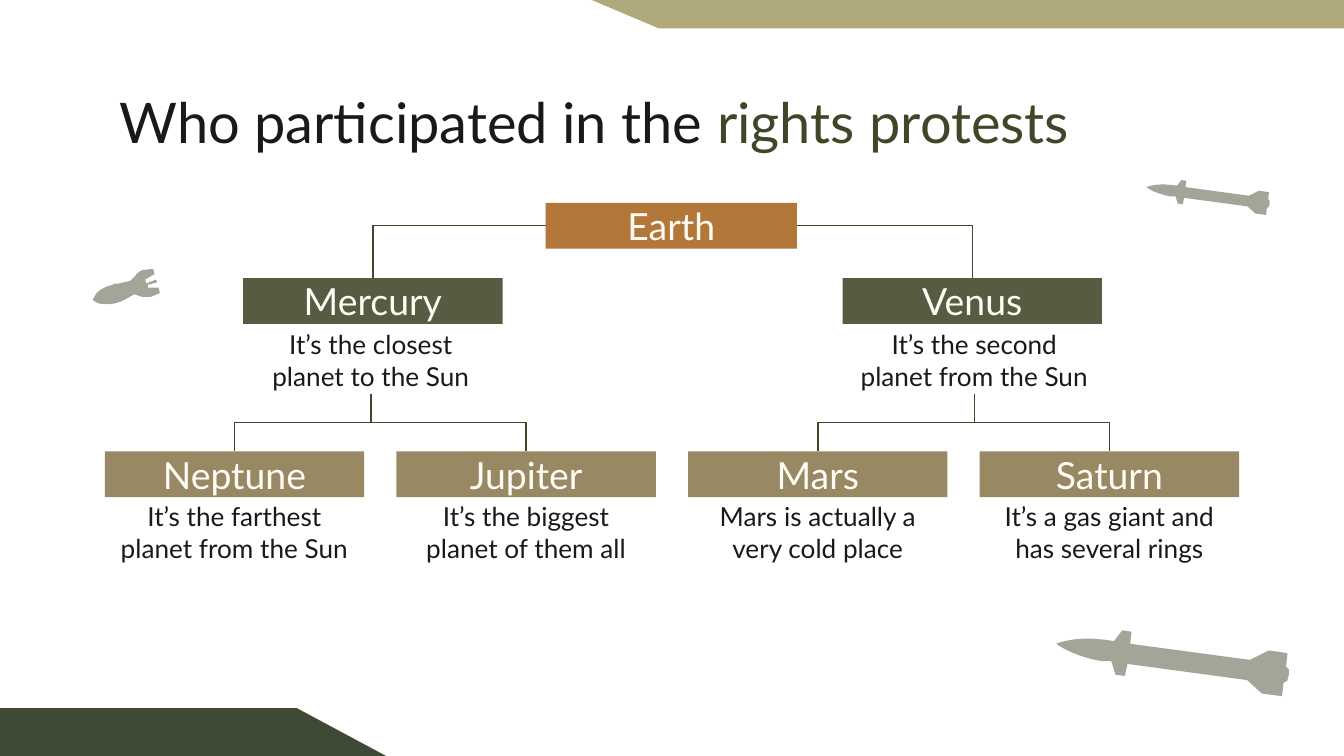
from lxml import etree
from pptx import Presentation
from pptx import util as u
from pptx.dml.color import RGBColor
from pptx.enum import shapes, text
from pptx.oxml.ns import qn

INK = dict(dark="191919", pale="FFFCF3", line="3E4728", root="B27739",
           mid="565C41", leaf="988964", sand="AFA97C", moss="3E4A35")
FONT = "Lato"
TITLE = [("Who participated in the ", "dark"), ("rights protests", "line")]
ROOT = ("Earth", 4.06, 1.87)
MIDS = [("Mercury", "It’s the closest planet to the Sun", 1.81, 1.78),
        ("Venus", "It’s the second planet from the Sun", 6.27, 6.27)]
LEAVES = [("Neptune", "It’s the farthest planet from the Sun"),
          ("Jupiter", "It’s the biggest planet of them all"),
          ("Mars", "Mars is actually a very cold place"),
          ("Saturn", "It’s a gas giant and has several rings")]
ROOT_Y, MID_Y, LEAF_Y = 1.51, 2.07, 3.36
CARD_W, CARD_H, NOTE_W, NOTE_H = 1.93, 0.34, 1.96, 0.5
LEFT, STEP = 0.78, 2.17

ROCKET = [(0.49, 0), (0.43, 0.08), (0.36, 0.07), (0.13, 0.04, 0, 0.1, 0, 0.1),
          (0, 0.1, 0.11, 0.19, 0.34, 0.23), (0.41, 0.23), (0.44, 0.33),
          (0.51, 0.34), (0.53, 0.25), (1.42, 0.37), (1.53, 0.47), (1.68, 0.49),
          (1.69, 0.39), (1.72, 0.38, 1.72, 0.37, 1.72, 0.37), (1.73, 0.33),
          (1.73, 0.29), (1.72, 0.28, 1.72, 0.28, 1.71, 0.27), (1.72, 0.17),
          (1.58, 0.15), (1.44, 0.22), (0.55, 0.1), (0.56, 0.01)]
BOMB = [(0.5, 0.18), (0.49, 0.14), (0.41, 0.14), (0.41, 0.12), (0.48, 0.1),
        (0.47, 0.08), (0.4, 0.11), (0.39, 0.08), (0.46, 0.04), (0.45, 0),
        (0.37, 0.01), (0.35, 0.02, 0.33, 0.03, 0.32, 0.05), (0.28, 0.09),
        (0.19, 0.11), (0.17, 0.11), (0.16, 0.11, 0.15, 0.11, 0.15, 0.12),
        (0.09, 0.13, 0.05, 0.16, 0.03, 0.18), (0.01, 0.21, 0, 0.23, 0, 0.23),
        (0, 0.23, 0.02, 0.25, 0.05, 0.26), (0.09, 0.26, 0.13, 0.27, 0.19, 0.25),
        (0.22, 0.24), (0.31, 0.19), (0.37, 0.21),
        (0.39, 0.21, 0.41, 0.21, 0.43, 0.21)]
TOP = [(0.52, 0.22), (0, 0), (5.62, 0), (5.62, 0.22)]
FOOT = [(0, 0.37), (0, 0), (2.23, 0), (2.92, 0.37)]
ART = [(ROCKET, 8.53, 1.34, 0.53, "line", 48), (BOMB, 0.69, 2, 1, "line", 48),
       (ROCKET, 7.86, 4.69, 1, "line", 48), (TOP, 4.38, -0.01, 1, "sand", 100),
       (FOOT, -0.02, 5.27, 1, "moss", 100)]

deck = Presentation()
deck.slide_width = u.Inches(10)
deck.slide_height = deck.slide_width * 9 // 16
slide = deck.slides.add_slide(deck.slide_layouts[6])


def color(name):
    return RGBColor.from_string(INK[name])


def paint(shape, name):
    shape.shadow.inherit = False
    shape.fill.solid()
    shape.fill.fore_color.rgb = color(name)
    shape.line.fill.background()


def write(shape, runs, size, pad=0.1, align=text.PP_ALIGN.CENTER):
    frame = shape.text_frame
    frame.word_wrap = True
    frame.vertical_anchor = text.MSO_ANCHOR.MIDDLE
    frame.margin_left = frame.margin_right = u.Inches(pad)
    frame.margin_top = frame.margin_bottom = u.Inches(pad)
    para = frame.paragraphs[0]
    para.alignment = align
    para.font.size, para.font.name = u.Pt(size), FONT
    for words, name in runs:
        run = para.add_run()
        run.text = words
        run.font.color.rgb = color(name)


def card(words, x, y, w, name):
    box = slide.shapes.add_shape(shapes.MSO_SHAPE.RECTANGLE,
                                 *map(u.Inches, (x, y, w, CARD_H)))
    paint(box, name)
    write(box, [(words, "pale")], 20, 0)


def note(words, x, y, w):
    box = slide.shapes.add_textbox(*map(u.Inches, (x, y, w, NOTE_H)))
    write(box, [(words, "dark")], 14)


def elbow(x1, y1, x2, y2):
    wire = slide.shapes.add_connector(shapes.MSO_CONNECTOR.ELBOW,
                                      *map(u.Inches, (x1, y1, x2, y2)))
    wire.line.color.rgb = color("line")
    wire.line.width = u.Pt(0.75)
    etree.SubElement(wire._element.spPr, qn("a:effectLst"))
    return wire._element.spPr


def corner(x1, y1, x2, y2):
    elbow(x1, y1, x2, y2).find(qn("a:prstGeom")).set("prst", "bentConnector2")


def branch(x1, y1, x2, y2):
    cx, cy = (x1 + x2) / 2, (y1 + y2) / 2
    dx, dy = (x2 - x1) / 2, (y2 - y1) / 2
    props = elbow(cx - dy, cy + dx, cx + dy, cy - dx)
    props.find(qn("a:xfrm")).set("rot", "5400000")


def trace(steps, count=8):
    spots = [steps[0]]
    for step in steps[1:]:
        if len(step) == 2:
            spots.append(step)
            continue
        a, b, c, d = spots[-1], step[:2], step[2:4], step[4:]
        for i in range(1, count + 1):
            t = i / count
            s = 1 - t
            spots.append(tuple(
                s**3 * a[k] + 3 * s * s * t * b[k] + 3 * s * t * t * c[k]
                + t**3 * d[k] for k in (0, 1)))
    return spots


def outline(steps, x, y, zoom, name, alpha):
    spots = [(u.Inches(x + zoom * px), u.Inches(y + zoom * py))
             for px, py in trace(steps)]
    pen = slide.shapes.build_freeform(*spots[0])
    pen.add_line_segments(spots[1:], close=True)
    shape = pen.convert_to_shape()
    paint(shape, name)
    if alpha < 100:
        tint = shape._element.spPr.find(qn("a:solidFill"))[0]
        etree.SubElement(tint, qn("a:alpha")).set("val", str(alpha * 1000))


head = slide.shapes.add_textbox(*map(u.Inches, (0.79, 0.59, 8.43, 0.63)))
write(head, TITLE, 30, align=text.PP_ALIGN.LEFT)

name, root_x, root_w = ROOT
card(name, root_x, ROOT_Y, root_w, "root")
for i, (name, words, x, note_x) in enumerate(MIDS):
    card(name, x, MID_Y, CARD_W, "mid")
    note(words, note_x, MID_Y + 0.36, NOTE_W)
    corner(root_x + i * root_w, ROOT_Y + CARD_H / 2, x + CARD_W / 2, MID_Y)

for i, (name, words) in enumerate(LEAVES):
    x = LEFT + i * STEP
    card(name, x, LEAF_Y, CARD_W, "leaf")
    note(words, x, LEAF_Y + 0.35, CARD_W)
    stem = MIDS[i // 2][3] + NOTE_W / 2
    branch(stem, MID_Y + 0.86, x + CARD_W / 2, LEAF_Y)

for art in ART:
    outline(*art)

deck.save("out.pptx")
